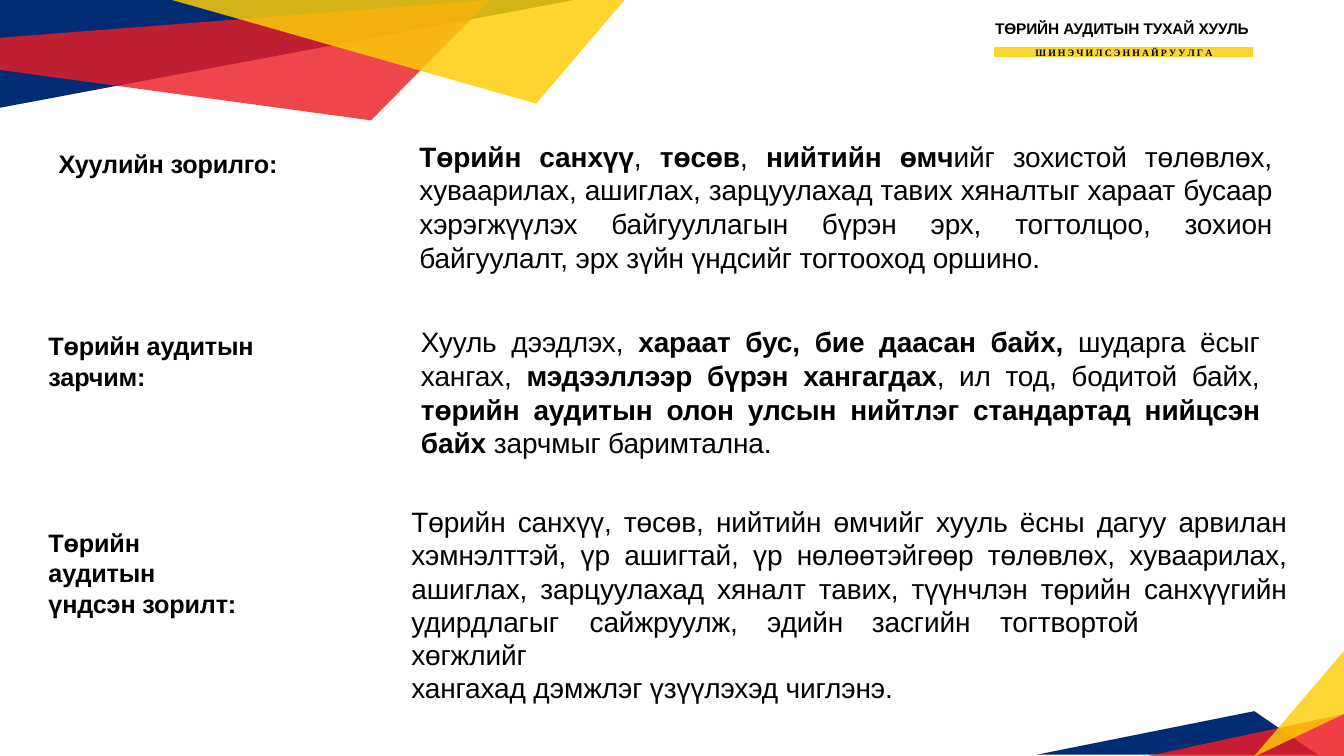
from collections import namedtuple
from dataclasses import dataclass

from lxml import etree
from pptx import Presentation
from pptx import util as u
from pptx.dml import color
from pptx.enum import dml, shapes, text
from pptx.oxml import ns

Box = namedtuple("Box", "x y w h")
Section = namedtuple("Section", "frame label label_lines body body_paras")


@dataclass(frozen=True)
class Theme:
    navy: str = "002C74"
    red: str = "EC1C23"
    yellow: str = "FDCD07"
    strip: str = "FDD530"
    white: str = "FFFFFF"
    ink: str = "000000"
    sans: str = "Arial"
    serif: str = "Times New Roman"
    title: int = 11
    subtitle: int = 7
    label: int = 18
    body: int = 20
    leading: float = 23.7
    tracking: float = -0.1


T = Theme()
LEFT, CENTER, JUSTIFY = text.PP_ALIGN.LEFT, text.PP_ALIGN.CENTER, text.PP_ALIGN.JUSTIFY


def rgb(value):
    return color.RGBColor.from_string(value)


def place(box):
    return [u.Pt(v) for v in box]


def paint(sp, fill, alpha=100):
    sp.shadow.inherit = False
    sp.fill.solid()
    sp.fill.fore_color.rgb = rgb(fill)
    if alpha < 100:
        clr = sp.fill._xPr.find(".//" + ns.qn("a:srgbClr"))
        etree.SubElement(clr, ns.qn("a:alpha")).set("val", str(alpha * 1000))


def outline(sp, width, dash=None):
    sp.line.color.rgb = rgb(T.white)
    sp.line.width = u.Pt(width)
    if dash:
        sp.line.dash_style = dash


def prepare(tf, anchor=text.MSO_ANCHOR.TOP):
    tf.word_wrap = True
    tf.auto_size = text.MSO_AUTO_SIZE.NONE
    tf.vertical_anchor = anchor
    tf.margin_left = tf.margin_right = tf.margin_bottom = 0
    tf.margin_top = u.Pt(0.9)


def write(p, lines, size, align=LEFT, bold=False, font=T.sans, before=0):
    p.alignment = align
    p.space_before = u.Pt(before)
    for i, line in enumerate(lines):
        if i:
            p.add_line_break()
        for words, strong in line:
            r = p.add_run()
            r.text = words
            r.font.name = font
            r.font.size = u.Pt(size)
            r.font.bold = bold or strong
            r.font.color.rgb = rgb(T.ink)
            r._r.get_or_add_rPr().set("spc", str(round(T.tracking * 100)))


def set_tabs(p, stops):
    tabs = etree.SubElement(p._p.get_or_add_pPr(), ns.qn("a:tabLst"))
    for stop in stops:
        tab = etree.SubElement(tabs, ns.qn("a:tab"))
        tab.set("pos", str(u.Pt(stop)))
        tab.set("algn", "l")


def draw_ribbons(s, box, ribbons):
    for points, fill, alpha in ribbons:
        corners = [(box.x + x, box.y + y) for x, y in points]
        builder = s.shapes.build_freeform(*corners[0], scale=float(u.Pt(1)))
        builder.add_line_segments(corners[1:], close=True)
        sp = builder.convert_to_shape()
        paint(sp, fill, alpha)
        sp.line.fill.background()


def draw_header(s, box):
    title = s.shapes.title
    title.left, title.top, title.width, title.height = place(Box(box.x, box.y, box.w, 14.4))
    prepare(title.text_frame)
    write(title.text_frame.paragraphs[0], [[("ТӨРИЙН АУДИТЫН ТУХАЙ ХУУЛЬ", True)]],
          T.title, CENTER, before=1)
    strip = s.shapes.add_shape(shapes.MSO_SHAPE.RECTANGLE,
                               *place(Box(box.x + 1.4, box.y + 19.4, box.w, box.h - 19.4)))
    paint(strip, T.strip)
    outline(strip, 2)
    prepare(strip.text_frame, text.MSO_ANCHOR.MIDDLE)
    write(strip.text_frame.paragraphs[0], [[("Ш И Н Э Ч И Л С Э Н Н А Й Р У У Л Г А", True)]],
          T.subtitle, CENTER, font=T.serif)


def add_text_box(s, frame, box):
    tb = s.shapes.add_textbox(*place(Box(frame.x + box.x, frame.y + box.y, box.w, box.h)))
    prepare(tb.text_frame)
    return tb.text_frame


def draw_section(s, section):
    frame = section.frame
    sp = s.shapes.add_shape(shapes.MSO_SHAPE.ROUNDED_RECTANGLE, *place(frame))
    sp.adjustments[0] = 0.08
    sp.shadow.inherit = False
    sp.fill.background()
    outline(sp, 1, dml.MSO_LINE.SQUARE_DOT)

    tf = add_text_box(s, frame, section.label)
    lines = [[(line, True)] for line in section.label_lines]
    write(tf.paragraphs[0], lines, T.label, before=1)

    tf = add_text_box(s, frame, section.body)
    for i, (lines, align, leading, stops) in enumerate(section.body_paras):
        p = tf.add_paragraph() if i else tf.paragraphs[0]
        write(p, lines, T.body, align, before=0 if i else 1.1)
        if leading:
            p.line_spacing = u.Pt(leading)
        if stops:
            set_tabs(p, stops)


TOP_RIBBONS = [
    ([(410.4, 0), (0, 0), (0, 77)], T.navy, 100),
    ([(350, 0), (0, 27.4), (0, 49.7), (265, 85.7)], T.red, 81),
    ([(446.4, 0), (123.1, 0), (383, 74.2)], T.yellow, 84),
]
BOTTOM_RIBBONS = [
    ([(155.7, 42.6), (0.9, 74.3), (201, 74.3)], T.navy, 100),
    ([(220, 44.8), (80, 75), (220, 75)], T.red, 84),
    ([(220, 0), (155.7, 75), (157, 75), (220, 44.8)], T.yellow, 81),
]

PURPOSE = [
    ("Төрийн санхүү", True), (", ", False), ("төсөв", True), (", ", False),
    ("нийтийн өмч", True),
    ("ийг зохистой төлөвлөх, хуваарилах, ашиглах, зарцуулахад тавих хяналтыг хараат "
     "бусаар хэрэгжүүлэх байгууллагын бүрэн эрх, тогтолцоо, зохион байгуулалт, "
     "эрх зүйн үндсийг тогтооход оршино.", False),
]
PRINCIPLE = [
    ("Хууль дээдлэх, ", False), ("хараат бус, бие даасан байх, ", True),
    ("шударга ёсыг хангах, ", False), ("мэдээллээр бүрэн хангагдах", True),
    (", ил тод, бодитой байх, ", False),
    ("төрийн аудитын олон улсын нийтлэг стандартад нийцсэн байх ", True),
    ("зарчмыг баримтална.", False),
]
GOAL = [
    [("Төрийн санхүү, төсөв, нийтийн өмчийг хууль ёсны дагуу арвилан хэмнэлттэй, "
      "үр ашигтай, үр нөлөөтэйгөөр төлөвлөх, хуваарилах, ашиглах, зарцуулахад "
      "хяналт тавих, түүнчлэн төрийн санхүүгийн "
      "удирдлагыг\tсайжруулж,\tэдийн\tзасгийн\tтогтвортой", False)],
    [("хөгжлийг", False)],
]
GOAL_END = [[("хангахад дэмжлэг үзүүлэхэд чиглэнэ.", False)]]

SECTIONS = [
    Section(Box(278.6, 86.4, 637.2, 123), Box(-236.8, 18.7, 170, 24), ["Хуулийн зорилго:"],
            Box(21, 12.2, 609, 99), [([PURPOSE], JUSTIFY, None, [])]),
    Section(Box(278.6, 223.2, 637.2, 123), Box(-244, 12.2, 168.5, 45),
            ["Төрийн аудитын зарчим:"],
            Box(22.1, 7.9, 599, 98), [([PRINCIPLE], JUSTIFY, None, [])]),
    Section(Box(278.6, 367.2, 637.2, 139), Box(-244, 8.6, 176.4, 66),
            ["Төрийн", "аудитын", "үндсэн зорилт:"],
            Box(15.2, -7.2, 625, 122.4),
            [(GOAL, JUSTIFY, T.leading, [127.4, 254.2, 329, 420.5]),
             (GOAL_END, LEFT, T.leading, [])]),
]


def main():
    prs = Presentation()
    prs.slide_width, prs.slide_height = u.Pt(960), u.Pt(540)
    s = prs.slides.add_slide(prs.slide_layouts[5])
    draw_ribbons(s, Box(0, 0, 447, 86), TOP_RIBBONS)
    draw_ribbons(s, Box(740, 465, 220, 75), BOTTOM_RIBBONS)
    draw_header(s, Box(707.8, 13, 187.2, 28.8))
    for section in SECTIONS:
        draw_section(s, section)
    prs.save("out.pptx")


if __name__ == "__main__":
    main()
